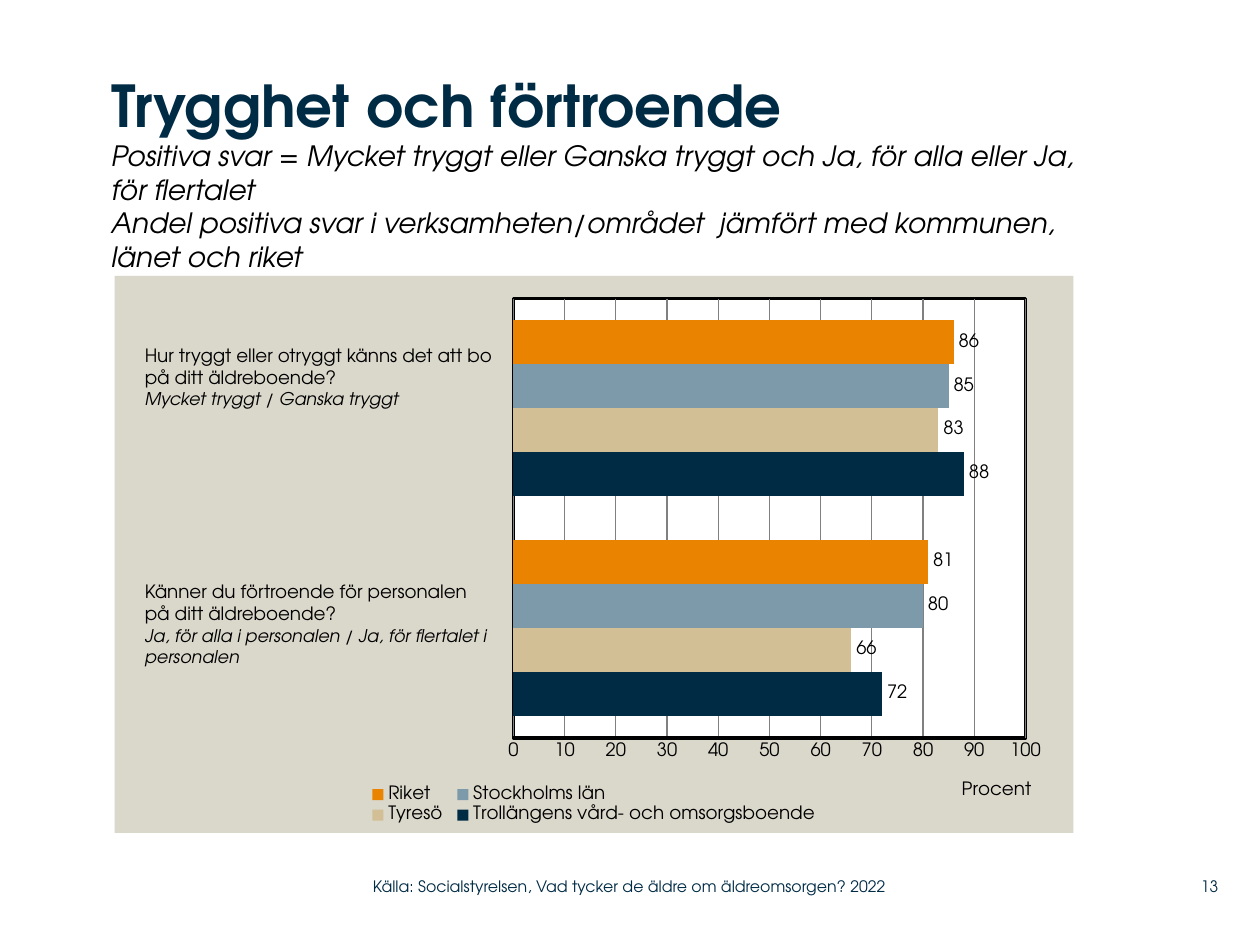
from lxml import etree
from pptx import Presentation
from pptx import util as u
from pptx.chart.data import CategoryChartData
from pptx.dml.color import RGBColor
from pptx.enum import chart as ch, text as tx
from pptx.oxml import parse_xml
from pptx.oxml.ns import nsdecls, qn

# Content: each text is a list of paragraphs, each paragraph a list of (words, style)
HEAD = [[
    ("Trygghet och förtroende", "head"),
    ("Positiva svar = Mycket tryggt eller Ganska tryggt och Ja, för alla eller Ja, för flertalet", "sub"),
    ("Andel positiva svar i verksamheten/området  jämfört med kommunen, länet och riket", "sub"),
]]
ASKS = [
    ((2.67, 6.81, 7.57, 2.06), [
        [("Hur tryggt eller otryggt känns det att bo på ditt äldreboende?", "ask")],
        [("Mycket tryggt / Ganska tryggt", "hint")]]),
    ((2.67, 11.58, 7.62, 2.49), [
        [("Känner du förtroende för personalen", "ask")],
        [("på ditt äldreboende?", "ask")],
        [("Ja, för alla i personalen / Ja, för flertalet i personalen", "hint")]]),
]
FEET = [
    ((7.52, 17.5, 11.25, 0.74), "Källa: Socialstyrelsen, Vad tycker de äldre om äldreomsorgen? 2022",
     tx.PP_ALIGN.LEFT),
    ((23.37, 17.5, 1.19, 0.74), "13", tx.PP_ALIGN.RIGHT),
]
CATS = ["1", "2"]
SERIES = [
    ("Trollängens vård- och omsorgsboende", (72, 88), "002B45"),
    ("Tyresö", (66, 83), "D3BF96"),
    ("Stockholms län", (80, 85), "7D9AAA"),
    ("Riket", (81, 86), "E98300"),
]
HEAD_BOX = (2.24, 1.4, 19.69, 4.17)
CHART_BOX = (2.31, 5.56, 19.33, 11.23)


class Theme:
    font = "TeX Gyre Adventor"
    navy, black, sand, white, grid = "002B45", "000000", "DAD7CB", "FFFFFF", "808080"
    # style: size, colour, bold, italic
    styles = {
        "head": (33, navy, True, False),
        "sub": (16, black, False, True),
        "ask": (10.5, black, False, False),
        "hint": (10, black, False, True),
        "foot": (9, navy, False, False),
    }


def place(box):
    return [u.Cm(v) for v in box]


def style(font, name):
    size, tint, font.bold, font.italic = Theme.styles[name]
    font.name, font.size = Theme.font, u.Pt(size)
    font.color.rgb = RGBColor.from_string(tint)


def write(frame, paras, align=tx.PP_ALIGN.LEFT):
    frame.word_wrap = True
    for i, runs in enumerate(paras):
        para = frame.add_paragraph() if i else frame.paragraphs[0]
        para.alignment = align
        for j, (words, name) in enumerate(runs):
            if j:
                para.add_line_break()
            run = para.add_run()
            run.text = words
            style(run.font, name)


def flush(frame, anchor):
    frame.margin_left = frame.margin_right = frame.margin_top = frame.margin_bottom = 0
    frame.vertical_anchor = anchor


def layout(node, index, inner=False, **parts):
    """Give a chart part a fixed place, as fractions of the chart."""
    for old in node.findall(qn("c:layout")):
        node.remove(old)
    lay = etree.Element(qn("c:layout"))
    man = etree.SubElement(lay, qn("c:manualLayout"))
    marks = [("layoutTarget", "inner")] if inner else []
    marks += [("xMode", "edge"), ("yMode", "edge"), *parts.items()]
    for tag, val in marks:
        etree.SubElement(man, qn("c:" + tag)).set("val", str(val))
    node.insert(index, lay)


def paint(fill, line=None, width=0):
    edge = (f'<a:solidFill><a:srgbClr val="{line}"/></a:solidFill>' if line else "<a:noFill/>")
    return parse_xml(
        f'<c:spPr {nsdecls("c", "a")}><a:solidFill><a:srgbClr val="{fill}"/></a:solidFill>'
        f'<a:ln w="{u.Pt(width)}">{edge}</a:ln></c:spPr>')


def draw_chart(slide):
    data = CategoryChartData()
    data.categories = CATS
    for name, vals, _ in SERIES:
        data.add_series(name, vals)
    chart = slide.shapes.add_chart(
        ch.XL_CHART_TYPE.BAR_CLUSTERED, *place(CHART_BOX), data).chart
    chart.has_title = False
    style(chart.font, "ask")

    # Bars and their values
    plot = chart.plots[0]
    plot.gap_width, plot.overlap, plot.vary_by_categories = 100, 0, False
    for bar, (_, _, tint) in zip(plot.series, SERIES):
        bar.format.fill.solid()
        bar.format.fill.fore_color.rgb = RGBColor.from_string(tint)
        tags = bar.data_labels
        tags.show_value = True
        tags.position = ch.XL_LABEL_POSITION.OUTSIDE_END
        style(tags.font, "ask")

    # Axes
    chart.category_axis.visible = False
    axis = chart.value_axis
    axis.minimum_scale, axis.maximum_scale, axis.major_unit = 0, 100, 10
    axis.major_tick_mark = axis.minor_tick_mark = ch.XL_TICK_MARK.NONE
    axis.format.line.color.rgb = RGBColor.from_string(Theme.black)
    axis.format.line.width = u.Pt(2)
    axis.major_gridlines.format.line.color.rgb = RGBColor.from_string(Theme.grid)
    axis.major_gridlines.format.line.width = u.Pt(0.75)
    style(axis.tick_labels.font, "ask")
    write(axis.axis_title.text_frame, [[("Procent", "ask")]])
    layout(axis.axis_title._element, 1, x=0.88, y=0.9)

    # Legend in two rows
    chart.has_legend = True
    key = chart.legend
    key.position = ch.XL_LEGEND_POSITION.BOTTOM
    key.include_in_layout = False
    style(key.font, "ask")
    layout(key._element, 1, x=0.26, y=0.91, w=0.48, h=0.08)

    # Backgrounds
    space = chart._chartSpace
    area = space.chart.plotArea
    layout(area, 0, inner=True, x=0.416, y=0.041, w=0.534, h=0.789)
    area.append(paint(Theme.white, Theme.black, 2))
    space.chart.addnext(paint(Theme.sand))


def main():
    deck = Presentation()
    deck.slide_width, deck.slide_height = u.Cm(25.4), u.Cm(19.05)
    slide = deck.slides.add_slide(deck.slide_layouts[5])

    # Heading
    title = slide.shapes.title
    title.left, title.top, title.width, title.height = place(HEAD_BOX)
    flush(title.text_frame, tx.MSO_ANCHOR.TOP)
    title.text_frame.auto_size = tx.MSO_AUTO_SIZE.NONE
    write(title.text_frame, HEAD)

    draw_chart(slide)

    # Questions beside the bars
    for box, paras in ASKS:
        write(slide.shapes.add_textbox(*place(box)).text_frame, paras)

    # Source and page number
    for box, words, align in FEET:
        frame = slide.shapes.add_textbox(*place(box)).text_frame
        flush(frame, tx.MSO_ANCHOR.MIDDLE)
        write(frame, [[(words, "foot")]], align)

    deck.save("out.pptx")


if __name__ == "__main__":
    main()
